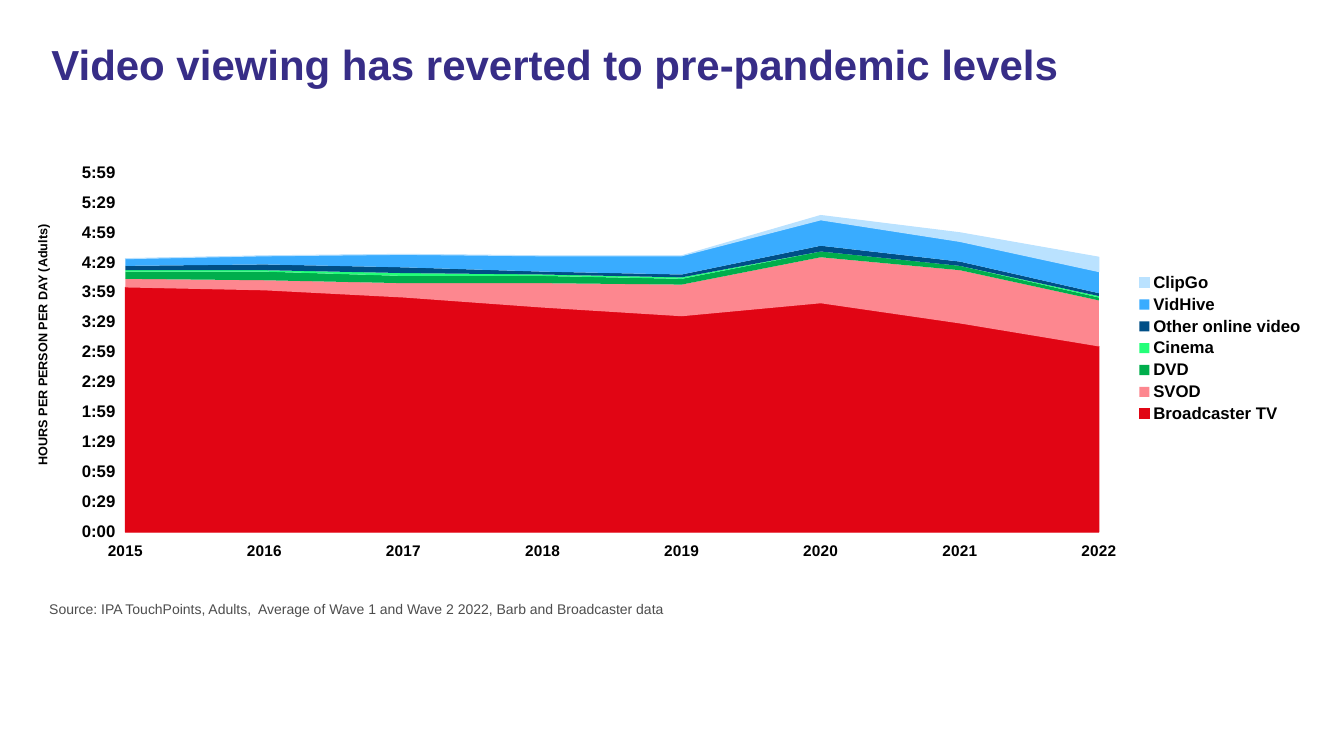
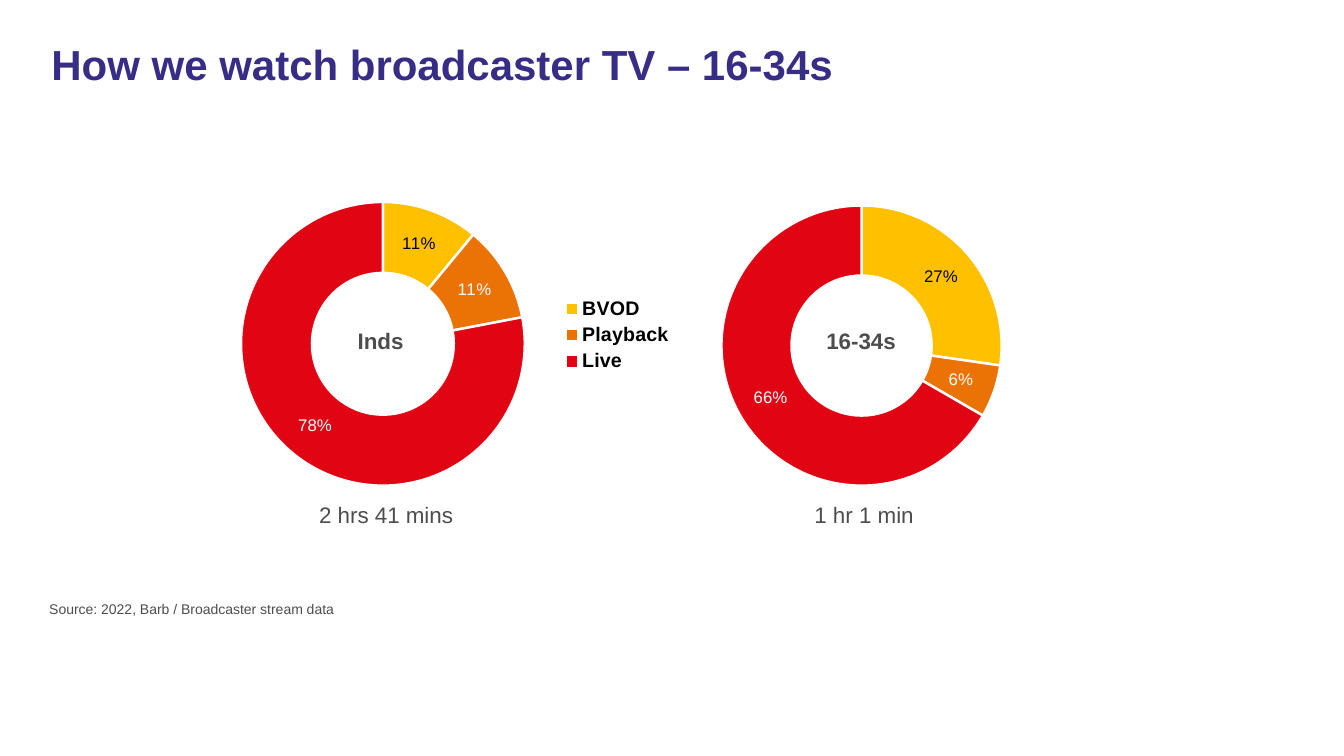
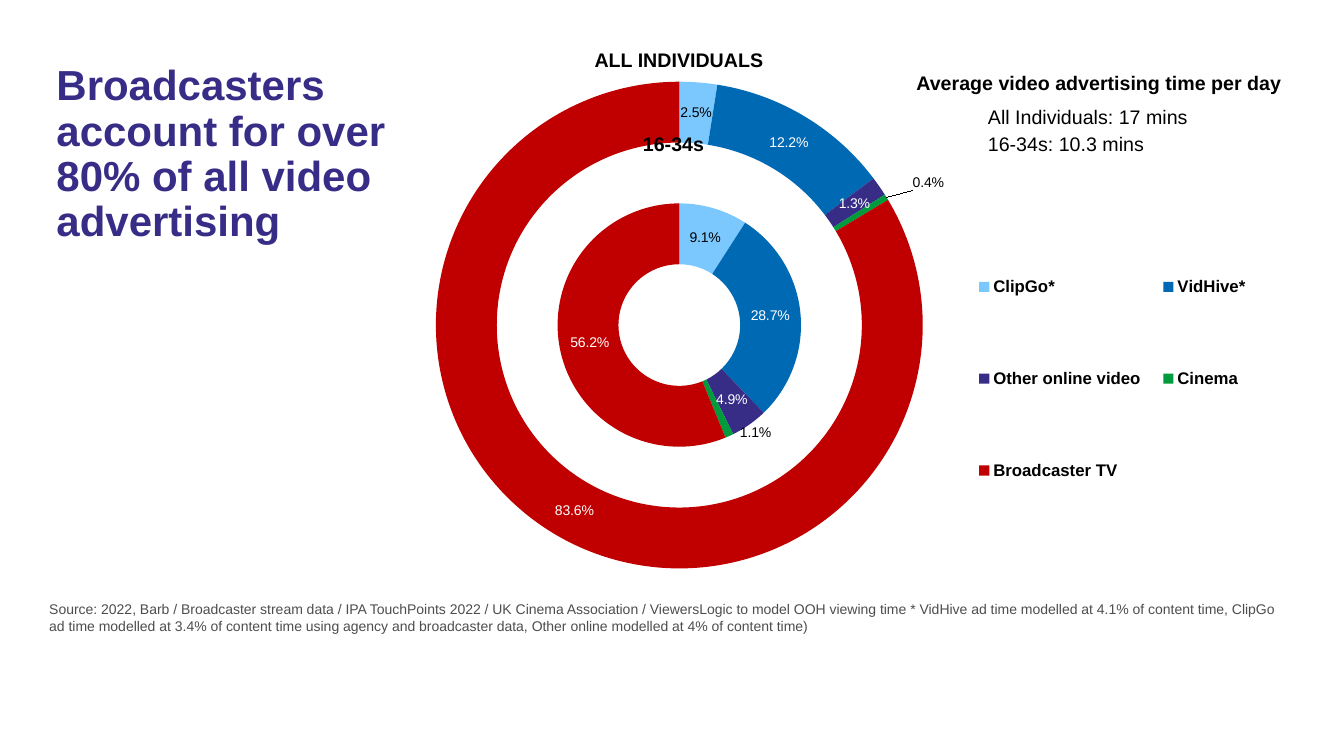
"""Three slides on video viewing: one area chart and three doughnuts."""
from pptx import Presentation
from pptx.chart.data import CategoryChartData
from pptx.dml.color import RGBColor
from pptx.enum import chart as ch, text
from pptx.oxml import parse_xml
from pptx.oxml.ns import nsdecls, qn
from pptx.util import Inches, Pt

FONT = "Arial"
BLACK = RGBColor(0, 0, 0)
WHITE = RGBColor(255, 255, 255)
GREY = RGBColor(0x4D, 0x4D, 0x4D)
INDIGO = RGBColor(0x37, 0x2D, 0x87)
RED = RGBColor(0xE1, 0x05, 0x14)
PINK = RGBColor(0xFD, 0x87, 0x8F)
GREEN = RGBColor(0x00, 0xAE, 0x4C)
LIME = RGBColor(0x24, 0xFF, 0x79)
NAVY = RGBColor(0x00, 0x4F, 0x87)
AZURE = RGBColor(0x39, 0xAC, 0xFF)
PALE_BLUE = RGBColor(0xBA, 0xE2, 0xFF)
YELLOW = RGBColor(0xFF, 0xC0, 0x00)
ORANGE = RGBColor(0xEB, 0x73, 0x05)
SKY = RGBColor(0x7B, 0xC8, 0xFF)
BLUE = RGBColor(0x00, 0x69, 0xB4)
LEAF = RGBColor(0x00, 0x9B, 0x3C)
DARK_RED = RGBColor(0xC0, 0x00, 0x00)
LEFT, CENTER = text.PP_ALIGN.LEFT, text.PP_ALIGN.CENTER


def write(sp, box, words, size, color=BLACK, bold=False, align=LEFT):
    """Place a text shape and fill it with one formatted run."""
    sp.left, sp.top, sp.width, sp.height = [Inches(v) for v in box]
    tf = sp.text_frame
    tf.word_wrap = True
    tf.auto_size = text.MSO_AUTO_SIZE.NONE
    tf.vertical_anchor = text.MSO_ANCHOR.TOP
    p = tf.paragraphs[0]
    p.alignment = align
    r = p.add_run()
    r.text = words
    r.font.name, r.font.size, r.font.bold = FONT, Pt(size), bold
    r.font.color.rgb = color
    return p


def set_layout(parent, index, **parts):
    """Give a chart part a manual layout."""
    for old in parent.findall(qn("c:layout")):
        parent.remove(old)
    body = "".join(f'<c:{k} val="{v}"/>' for k, v in parts.items())
    parent.insert(index, parse_xml(
        f'<c:layout {nsdecls("c")}><c:manualLayout>{body}</c:manualLayout></c:layout>'))


prs = Presentation()
prs.slide_width, prs.slide_height = Inches(13.33), Inches(7.5)

WIDE_TITLE = (0.41, 0.39, 12.4, 1.12)
SLIDES = [
    ("Video viewing has reverted to pre-pandemic levels", WIDE_TITLE,
     "Source: IPA TouchPoints, Adults,  Average of Wave 1 and Wave 2 2022, Barb and Broadcaster data"),
    ("How we watch broadcaster TV – 16-34s", WIDE_TITLE,
     "Source: 2022, Barb / Broadcaster stream data"),
    ("Broadcasters account for over 80% of all video advertising", (0.46, 0.59, 3.95, 2.76),
     "Source: 2022, Barb / Broadcaster stream data / IPA TouchPoints 2022 / UK Cinema Association / "
     "ViewersLogic to model OOH viewing time * VidHive ad time modelled at 4.1% of content time, "
     "ClipGo ad time modelled at 3.4% of content time using agency and broadcaster data, "
     "Other online modelled at 4% of content time)"),
]
for title, box, source in SLIDES:
    s = prs.slides.add_slide(prs.slide_layouts[5])
    write(s.shapes.title, box, title, 30, INDIGO, True).line_spacing = 0.9
    write(s.shapes.add_textbox(0, 0, 0, 0), (0.39, 5.91, 12.4, 0.33), source, 10, GREY)
viewing, watching, advertising = prs.slides

YEARS = [str(y) for y in range(2015, 2023)]
VIEWING = [
    ("Broadcaster TV", RED, (0.17, 0.168, 0.163, 0.156, 0.15, 0.159, 0.145, 0.129)),
    ("SVOD", PINK, (0.006, 0.007, 0.01, 0.017, 0.022, 0.032, 0.037, 0.032)),
    ("DVD", GREEN, (0.005, 0.006, 0.005, 0.005, 0.004, 0.004, 0.003, 0.002)),
    ("Cinema", LIME, (0.001, 0.001, 0.002, 0.001, 0.001, 0, 0, 0.001)),
    ("Other online video", NAVY, (0.003, 0.004, 0.004, 0.002, 0.002, 0.004, 0.003, 0.002)),
    ("VidHive", AZURE, (0.005, 0.006, 0.009, 0.011, 0.013, 0.018, 0.014, 0.015)),
    ("ClipGo", PALE_BLUE, (0, 0, 0, 0, 0, 0.003, 0.006, 0.01)),
]
MODES = ["BVOD", "Playback", "Live"]
PLATFORMS = ["ClipGo*", "VidHive*", "Other online video", "Cinema", "Broadcaster TV"]
AREA, RING = ch.XL_CHART_TYPE.AREA_STACKED, ch.XL_CHART_TYPE.DOUGHNUT
CHARTS = [
    (viewing, AREA, (0.3, 1.11, 12.74, 4.69), (0.074, 0.128, 0.758, 0.761), YEARS,
     [(name, vals) for name, _, vals in VIEWING], "h:mm", 12),
    (watching, RING, (2.15, 1.4, 4.63, 3.85), (0.052, 0.131, 0.608, 0.783), MODES,
     [("Inds", (11, 11, 78))], '0"%"', 14),
    (watching, RING, (6.88, 1.4, 4.87, 3.85), (0.052, 0.166, 0.58, 0.722), MODES,
     [("16-34s", (27, 6, 66))], '0"%"', None),
    (advertising, RING, (3.21, 0.14, 9.6, 6.08), (0.116, 0.102, 0.503, 0.811), PLATFORMS,
     [("16-34s", (9.1, 28.7, 4.9, 1.1, 56.2)), ("Gap", (None,) * 5),
      ("All individuals", (2.5, 12.2, 1.3, 0.4, 83.6))], '0.0"%"', 12),
]
charts = []
for s, kind, box, plot, cats, series, fmt, legend_size in CHARTS:
    data = CategoryChartData(number_format=fmt)
    data.categories = cats
    for name, vals in series:
        data.add_series(name, vals)
    chart = s.shapes.add_chart(kind, *[Inches(v) for v in box], data).chart
    chart.has_title = False
    chart.font.name, chart.font.size = FONT, Pt(12)
    chart.font.color.rgb = BLACK
    chart.has_legend = legend_size is not None
    if chart.has_legend:
        chart.legend.position = ch.XL_LEGEND_POSITION.RIGHT
        chart.legend.include_in_layout = False
        font = chart.legend.font
        font.name, font.size, font.bold = FONT, Pt(legend_size), True
        font.color.rgb = BLACK
    root = chart._chartSpace
    root.find(qn("c:chart")).addnext(parse_xml(
        f'<c:spPr {nsdecls("c", "a")}><a:noFill/><a:ln><a:noFill/></a:ln></c:spPr>'))
    x, y, w, h = plot
    set_layout(root.xpath("c:chart/c:plotArea")[0], 0, layoutTarget="inner",
               xMode="edge", yMode="edge", x=x, y=y, w=w, h=h)
    charts.append(chart)
area, *rings = charts

area.plots[0].vary_by_categories = False
for ser, (name, color, _) in zip(area.plots[0].series, VIEWING):
    ser.format.fill.solid()
    ser.format.fill.fore_color.rgb = color
    if color in (RED, PALE_BLUE):
        ser.format.line.color.rgb = color
        ser.format.line.width = Pt(0.75)
for axis, size in ((area.category_axis, 11), (area.value_axis, 12)):
    axis.has_major_gridlines = False
    axis.format.line.fill.background()
    axis.tick_labels.font.size = Pt(size)
    axis.tick_labels.font.bold = True
hours = area.value_axis
hours.minimum_scale, hours.maximum_scale, hours.major_unit = 0, 0.25, 0.020833
hours.tick_labels.number_format = "h:mm"
hours.tick_labels.number_format_is_linked = False
hours._element.find(qn("c:crossBetween")).set("val", "midCat")
sp = viewing.shapes.add_textbox(0, 0, 0, 0)
write(sp, (-1.12, 3.05, 3.08, 0.25), "HOURS PER PERSON PER DAY (Adults)", 9, bold=True)
sp.rotation = 270

MODE_COLORS = [YELLOW, ORANGE, RED]
PLATFORM_COLORS = [SKY, BLUE, INDIGO, LEAF, DARK_RED]
RING_STYLES = [(MODE_COLORS, 12, '0"%"', 50), (MODE_COLORS, 12, '0"%"', 50),
               (PLATFORM_COLORS, 10, '0.0"%"', 47)]
for chart, (colors, size, fmt, hole) in zip(rings, RING_STYLES):
    chart._chartSpace.xpath(".//c:holeSize")[0].set("val", str(hole))
    for ser in chart.plots[0].series:
        if None in ser.values:
            continue
        labels = ser.data_labels
        labels.show_value = True
        labels.show_percentage = False
        labels.number_format, labels.number_format_is_linked = fmt, False
        labels.font.name, labels.font.size = FONT, Pt(size)
        labels.font.color.rgb = WHITE
        for i, color in enumerate(colors):
            point = ser.points[i]
            point.format.fill.solid()
            point.format.fill.fore_color.rgb = color
            if colors is MODE_COLORS:
                point.format.line.color.rgb = WHITE
                point.format.line.width = Pt(1.75)
            else:
                point.format.line.fill.background()
            if i in (0, 3):
                font = point.data_label.font
                font.name, font.size = FONT, Pt(size)
                font.color.rgb = BLACK

breakdown = rings[2]
set_layout(breakdown.legend._element, 1, xMode="edge", yMode="edge", x=0.66, y=0.31, w=0.31, h=0.57)
inner, _, outer = breakdown.plots[0].series
for ser, dx, dy in ((inner, 0.04, 0.04), (outer, 0.07, -0.05)):
    label = ser._element.xpath('.//c:dLbl[c:idx/@val="3"]')[0]
    set_layout(label, 1, x=dx, y=dy)

LABELS = [
    (watching, (2.96, 4.92, 1.74, 0.37), "2 hrs 41 mins", 16, GREY, False, CENTER),
    (watching, (7.7, 4.92, 1.74, 0.37), "1 hr 1 min", 16, GREY, False, CENTER),
    (watching, (3.24, 3.2, 1.07, 0.37), "Inds", 16, GREY, True, CENTER),
    (watching, (8.07, 3.2, 0.94, 0.37), "16-34s", 16, GREY, True, CENTER),
    (advertising, (9.7, 0.99, 2.99, 0.34), "All Individuals: 17 mins", 14, BLACK, False, LEFT),
    (advertising, (9.7, 1.26, 2.53, 0.34), "16-34s: 10.3 mins", 14, BLACK, False, LEFT),
    (advertising, (8.99, 0.65, 3.82, 0.34), "Average video advertising time per day", 14, BLACK, True, CENTER),
    (advertising, (5.77, 0.43, 1.93, 0.34), "ALL INDIVIDUALS", 14, BLACK, True, CENTER),
    (advertising, (6.09, 1.26, 1.18, 0.34), "16-34s", 14, BLACK, True, CENTER),
]
for s, *label in LABELS:
    write(s.shapes.add_textbox(0, 0, 0, 0), *label)

prs.save("out.pptx")
